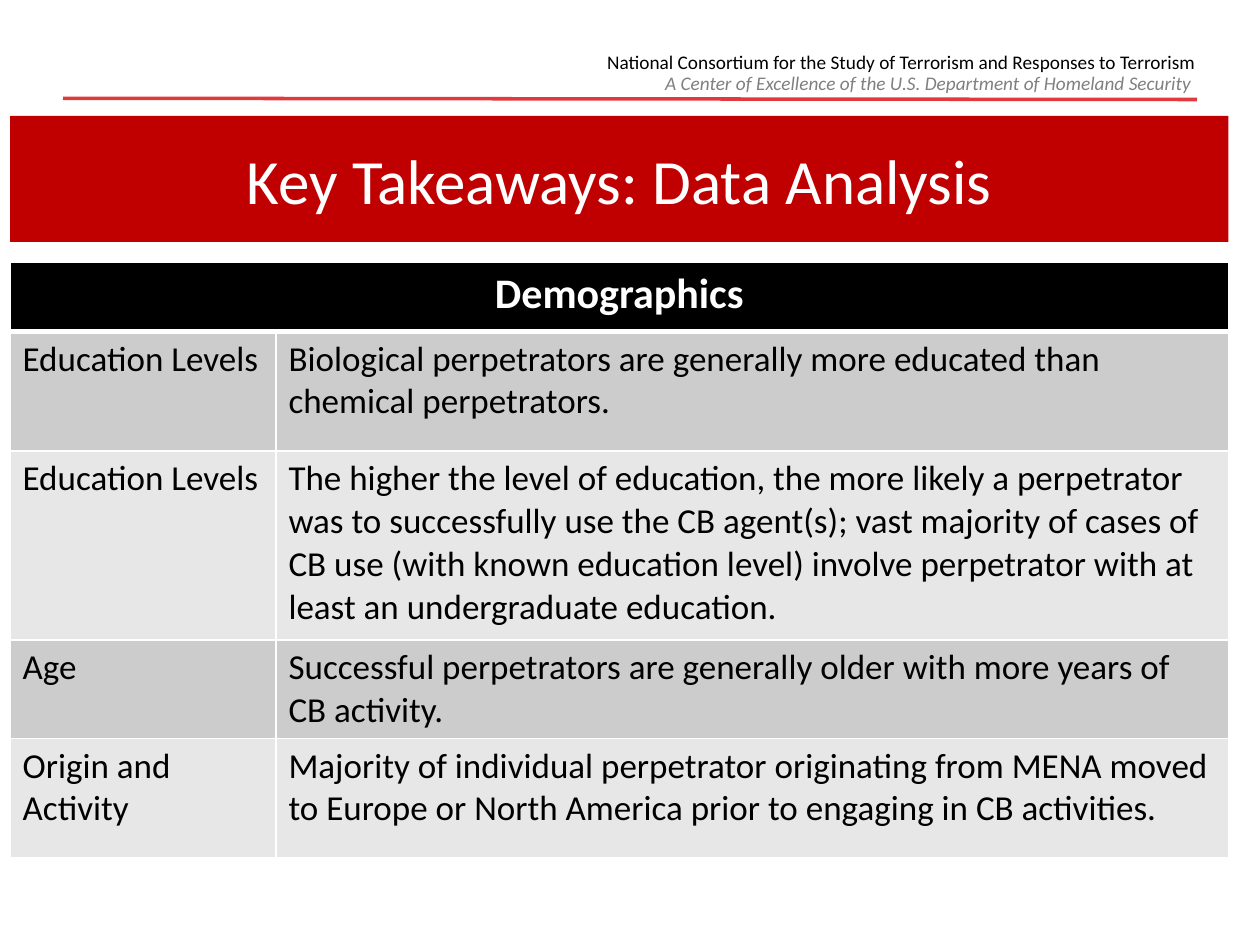
from lxml.etree import SubElement
from pptx import Presentation
from pptx.dml.color import RGBColor as Rgb
from pptx.enum.shapes import MSO_CONNECTOR as Connector
from pptx.enum.text import MSO_ANCHOR as Anchor, MSO_AUTO_SIZE as AutoSize, PP_ALIGN as Align
from pptx.oxml.ns import qn
from pptx.util import Inches, Pt

WIDTH, HEIGHT = 10, 7.5
COLORS = {
    "black": "000000", "white": "FFFFFF", "gray": "808080",
    "rule": "E03A3E", "banner": "C00000",
    "band_dark": "CCCCCC", "band_light": "E7E7E7",
}
FINDINGS = [
    ("Education Levels",
     "Biological perpetrators are generally more educated than chemical perpetrators."),
    ("Education Levels",
     "The higher the level of education, the more likely a perpetrator was to successfully "
     "use the CB agent(s); vast majority of cases of CB use (with known education level) "
     "involve perpetrator with at least an undergraduate education."),
    ("Age",
     "Successful perpetrators are generally older with more years of CB activity."),
    ("Origin and Activity",
     "Majority of individual perpetrator originating from MENA moved to Europe or North "
     "America prior to engaging in CB activities."),
]
# Content block shared by the banner and the table
LEFT, SPAN = 0.08, 9.67


class SlideBuilder:
    """Holds the style and the current slide; lengths are inches on a 10 x 7.5 grid."""

    font_name = "Calibri"

    def __init__(self, deck, layout):
        self.slide = deck.slides.add_slide(deck.slide_layouts[layout])

    def put_text(self, frame, text, size, color, align=Align.LEFT, **formats):
        paragraph = frame.paragraphs[0]
        paragraph.alignment = align
        run = paragraph.add_run()
        run.text = text
        for name, value in {"name": self.font_name, "size": Pt(size), **formats}.items():
            setattr(run.font, name, value)
        run.font.color.rgb = Rgb.from_string(COLORS[color])

    def paint(self, target, color):
        target.fill.solid()
        target.fill.fore_color.rgb = Rgb.from_string(COLORS[color])

    def title(self, text, box):
        banner = self.slide.shapes.title
        for name, value in zip(("left", "top", "width", "height"), box):
            setattr(banner, name, Inches(value))
        self.paint(banner, "banner")
        banner.text_frame.vertical_anchor = Anchor.MIDDLE
        self.put_text(banner.text_frame, text, 36, "white", Align.CENTER)

    def label(self, text, box, color, align=Align.LEFT, frame_formats=None, **formats):
        frame = self.slide.shapes.add_textbox(*map(Inches, box)).text_frame
        for name, value in {"word_wrap": True, **(frame_formats or {})}.items():
            setattr(frame, name, value)
        self.put_text(frame, text, 11, color, align, **formats)

    def rule(self, start, end):
        line = self.slide.shapes.add_connector(
            Connector.STRAIGHT, *map(Inches, (*start, *end)))
        line.line.width = Pt(2)
        line.line.color.rgb = Rgb.from_string(COLORS["rule"])
        SubElement(line._element.spPr, qn("a:effectLst"))

    def borders(self, cell, **widths):
        properties = cell._tc.get_or_add_tcPr()
        for side in "LRTB":
            edge = SubElement(properties, qn(f"a:ln{side}"), w=str(Pt(widths.get(side, 1))))
            solid = SubElement(edge, qn("a:solidFill"))
            SubElement(solid, qn("a:srgbClr"), val=COLORS["white"])

    def table(self, heading, rows, box, columns, heights):
        grid = self.slide.shapes.add_table(
            len(rows) + 1, len(columns), *map(Inches, box)).table
        for column, width in zip(grid.columns, columns):
            column.width = Inches(width)
        for row, height in zip(grid.rows, heights):
            row.height = Inches(height)

        # Heading across all columns, with a heavier edge below
        head = grid.cell(0, 0)
        head.merge(grid.cell(0, len(columns) - 1))
        for cell in grid.rows[0].cells:
            self.borders(cell, B=3)
            self.paint(cell, "black")
        self.put_text(head.text_frame, heading, 24, "white", Align.CENTER, bold=True)

        # Banded findings
        for r, row in enumerate(rows, 1):
            for c, text in enumerate(row):
                cell = grid.cell(r, c)
                self.borders(cell, T=3 if r == 1 else 1)
                self.paint(cell, "band_dark" if r % 2 else "band_light")
                self.put_text(cell.text_frame, text, 20, "black", bold=False)


def main():
    deck = Presentation()
    deck.slide_width, deck.slide_height = Inches(WIDTH), Inches(HEIGHT)
    page = SlideBuilder(deck, layout=5)

    # Letterhead
    page.label("National Consortium for the Study of Terrorism and Responses to Terrorism",
               (3.97, 0.33, 5.62, 0.33), "black", Align.RIGHT,
               {"vertical_anchor": Anchor.MIDDLE})
    page.rule((0.5, 0.78), (9.5, 0.79))
    page.label("A Center of Excellence of the U.S. Department of Homeland Security",
               (5.18, 0.52, 4.57, 0.29), "gray",
               frame_formats={"word_wrap": False, "auto_size": AutoSize.SHAPE_TO_FIT_TEXT},
               italic=True)

    # Banner and findings
    page.title("Key Takeaways: Data Analysis", (LEFT, 0.92, SPAN, 1))
    page.table("Demographics", FINDINGS, (LEFT, 2.08, SPAN, 4.71),
               columns=(2.11, SPAN - 2.11), heights=(0.55, 0.95, 1.5, 0.78, 0.95))

    deck.save("out.pptx")


if __name__ == "__main__":
    main()
